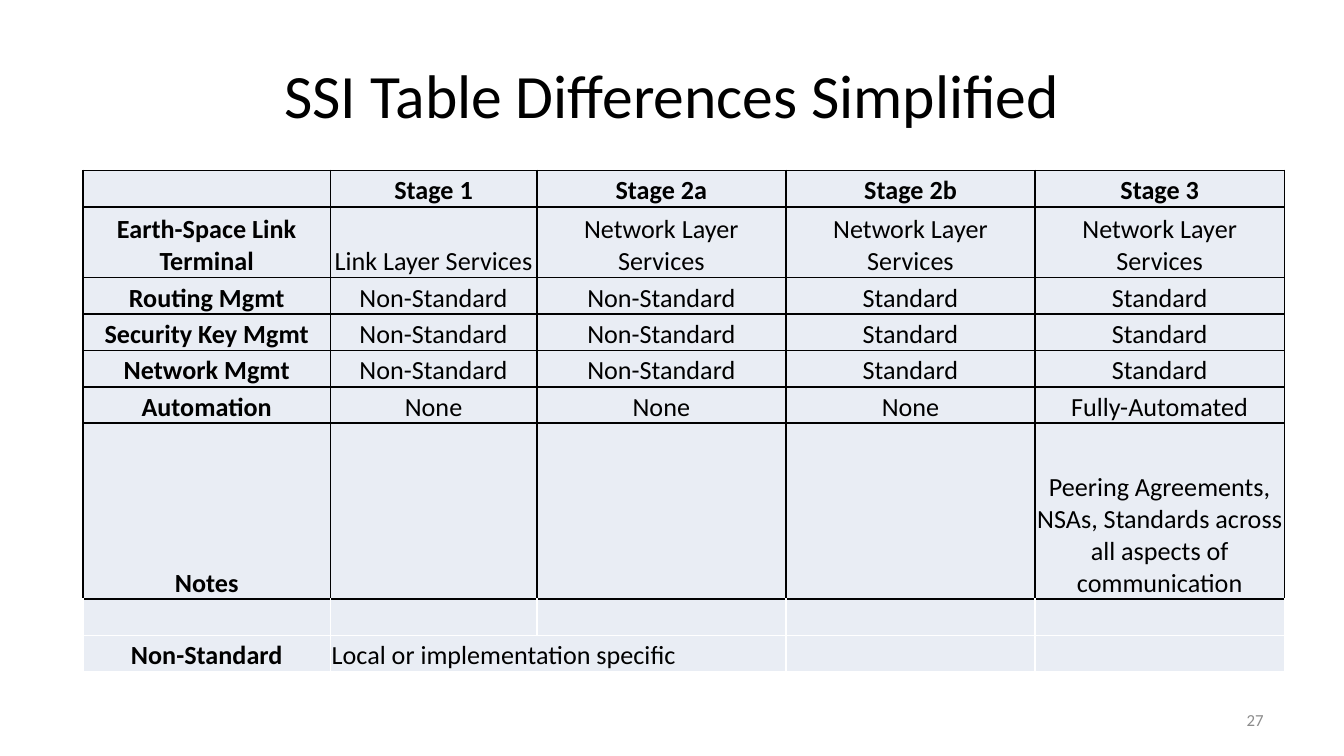
from lxml import etree
from pptx import Presentation
from pptx.dml.color import RGBColor
from pptx.enum.text import MSO_ANCHOR, PP_ALIGN
from pptx.oxml.ns import qn
from pptx.util import Pt

MIDDLE, BOTTOM = MSO_ANCHOR.MIDDLE, MSO_ANCHOR.BOTTOM
LEFT, CENTER, RIGHT = PP_ALIGN.LEFT, PP_ALIGN.CENTER, PP_ALIGN.RIGHT

# Content
TITLE = "SSI Table Differences Simplified"
PAGE = "27"
STAGES = ["", "Stage 1", "Stage 2a", "Stage 2b", "Stage 3"]
NETWORK = "Network Layer Services"
MANAGED = ["Non-Standard", "Non-Standard", "Standard", "Standard"]
NOTE = "Peering Agreements, NSAs, Standards across all aspects of communication"
ROWS = [
    STAGES,
    ["Earth-Space Link Terminal", "Link Layer Services"] + [NETWORK] * 3,
    ["Routing Mgmt"] + MANAGED,
    ["Security Key Mgmt"] + MANAGED,
    ["Network Mgmt"] + MANAGED,
    ["Automation", "None", "None", "None", "Fully-Automated"],
    ["Notes", "", "", "", NOTE],
    [""] * 5,
    ["Non-Standard", "Local or implementation specific", "", "", ""],
]
NOTES_ROW, LEGEND_ROW = 6, 8

# Theme and measures, in points
THEME = {
    "font": "Calibri", "title": 33, "cell": 14, "page": 9,
    "ink": "000000", "muted": "8C8C8C", "fill": "E9EDF4", "gap": "FFFFFF",
}
TABLE_LEFT, TABLE_TOP = 44.5, 91.3
COLUMN_WIDTHS = [132.5, 110.6] + [133.5] * 3
LINE_HEIGHT = 19.5
ROW_HEIGHTS = [LINE_HEIGHT] * len(ROWS)
ROW_HEIGHTS[1], ROW_HEIGHTS[NOTES_ROW] = 38, 94.3
INSET = 0.7


def write(frame, text, size, color="ink", align=CENTER, anchor=MIDDLE, bold=False):
    frame.word_wrap = True
    frame.vertical_anchor = anchor
    paragraph = frame.paragraphs[0]
    paragraph.alignment = align
    font = paragraph.font
    font.name, font.size, font.bold = THEME["font"], Pt(THEME[size]), bold
    font.color.rgb = RGBColor.from_string(THEME[color])
    if text:
        paragraph.add_run().text = text
    else:  # keeps an empty cell as low as its row
        etree.SubElement(paragraph._p, qn("a:endParaRPr"), sz=str(THEME[size] * 100))


def set_borders(cell, row):
    properties = cell._tc.get_or_add_tcPr()
    for side in ("L", "R", "T", "B"):
        ruled = row <= NOTES_ROW or (row == NOTES_ROW + 1 and side == "T")
        line = etree.SubElement(properties, qn(f"a:ln{side}"), w=str(Pt(1)))
        paint = etree.SubElement(line, qn("a:solidFill"))
        etree.SubElement(paint, qn("a:srgbClr"), val=THEME["ink" if ruled else "gap"])


prs = Presentation()
prs.slide_width, prs.slide_height = Pt(720), Pt(405)
slide = prs.slides.add_slide(prs.slide_layouts[5])

# Title
title = slide.shapes.title
title.left, title.top, title.width, title.height = Pt(36), Pt(16.5), Pt(648), Pt(67.5)
write(title.text_frame, TITLE, "title")

# Page number
page = slide.shapes.add_textbox(Pt(516), Pt(375), Pt(168), Pt(21.6))
write(page.text_frame, PAGE, "page", "muted", RIGHT)

# Stage comparison table
table = slide.shapes.add_table(
    len(ROWS), len(STAGES), Pt(TABLE_LEFT), Pt(TABLE_TOP),
    Pt(sum(COLUMN_WIDTHS)), Pt(sum(ROW_HEIGHTS))).table
table.first_row = table.horz_banding = False
for column, width in zip(table.columns, COLUMN_WIDTHS):
    column.width = Pt(width)
for row, height in zip(table.rows, ROW_HEIGHTS):
    row.height = Pt(height)

for r, labels in enumerate(ROWS):
    for c, label in enumerate(labels):
        cell = table.cell(r, c)
        cell.margin_left = cell.margin_right = cell.margin_top = Pt(INSET)
        cell.margin_bottom = 0
        cell.vertical_anchor = BOTTOM
        is_definition = r == LEGEND_ROW and c == 1
        write(cell.text_frame, label, "cell", align=LEFT if is_definition else CENTER,
              anchor=BOTTOM, bold=r == 0 or c == 0)
        set_borders(cell, r)
        cell.fill.solid()
        cell.fill.fore_color.rgb = RGBColor.from_string(THEME["fill"])
table.cell(LEGEND_ROW, 1).merge(table.cell(LEGEND_ROW, 2))

prs.save("out.pptx")
